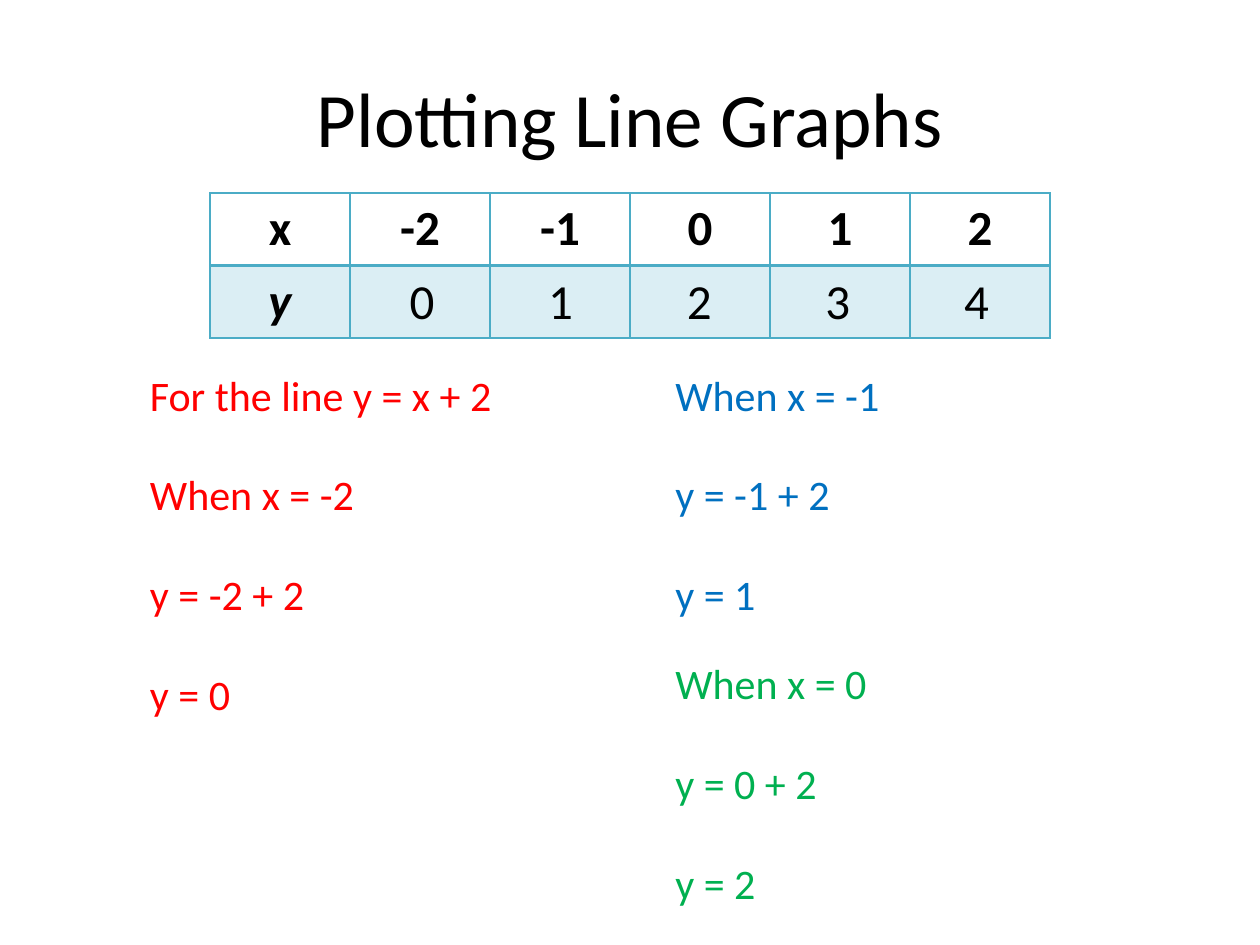
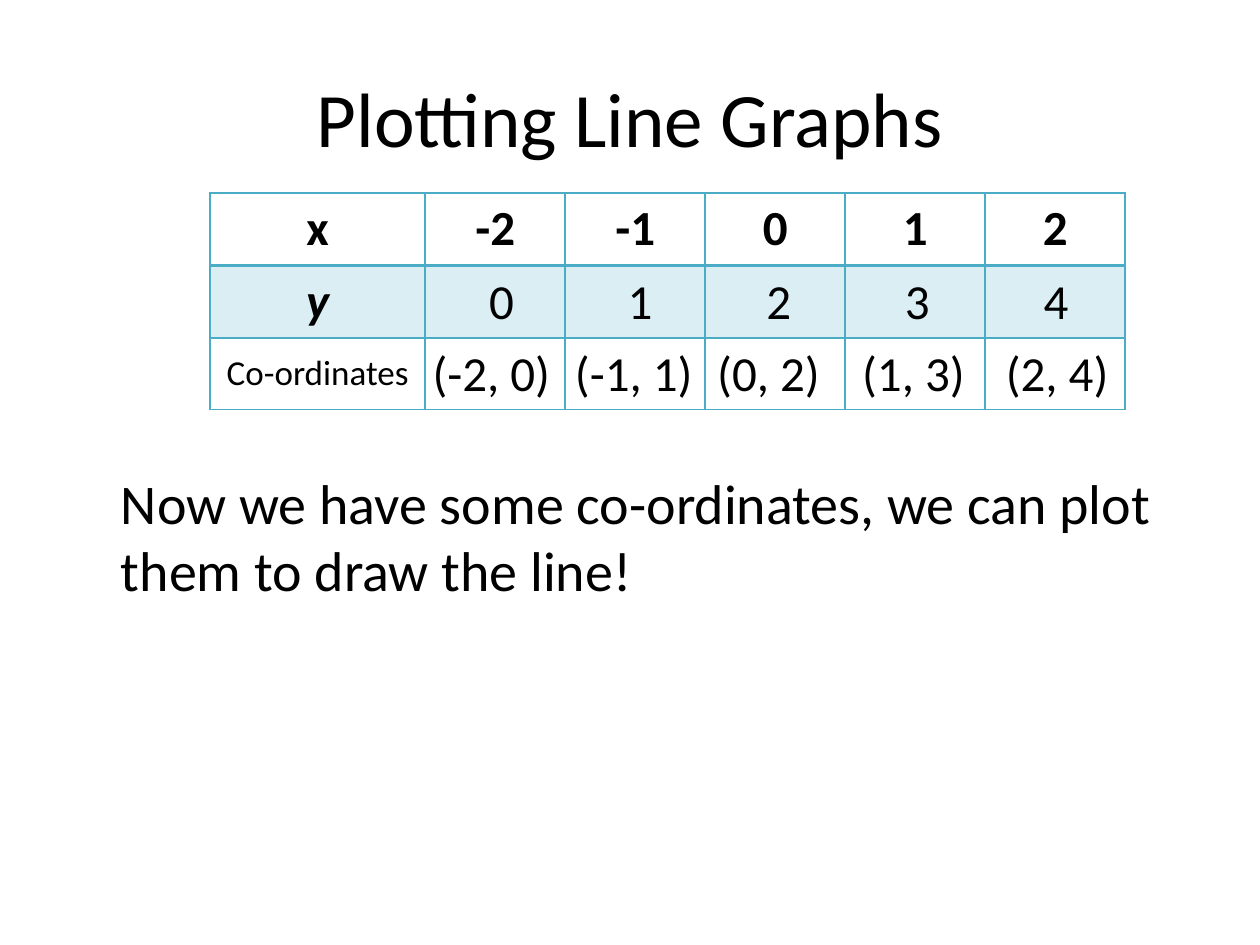
from lxml.etree import SubElement
from pptx import Presentation
from pptx.dml.color import RGBColor
from pptx.enum.text import MSO_ANCHOR as Anchor, PP_ALIGN as Align
from pptx.oxml.ns import qn
from pptx.util import Pt

BLACK = RGBColor(0x00, 0x00, 0x00)
RED = RGBColor(0xFF, 0x00, 0x00)
BLUE = RGBColor(0x00, 0x70, 0xC0)
GREEN = RGBColor(0x00, 0xB0, 0x50)
TEAL = RGBColor(0x4B, 0xAC, 0xC6)
PALE_TEAL = RGBColor(0xDB, 0xEE, 0xF4)

TITLE_ONLY = 5
INSET = 3.6
TABLE_LEFT, TABLE_TOP = 120, 110.2
COLUMN_WIDTH, ROW_HEIGHT = 80, 40.9
VALUE_PITCH, VALUE_TOP = 79.2, 151.2
X_VALUES = ["-2", "-1", "0", "1", "2"]
Y_VALUES = ["0", "1", "2", "3", "4"]


class LessonDeck:
    font = "Calibri"

    def __init__(self):
        self.deck = Presentation()
        self.deck.slide_width, self.deck.slide_height = Pt(720), Pt(540)
        self.page = None

    def add_page(self, heading):
        self.page = self.deck.slides.add_slide(self.deck.slide_layouts[TITLE_ONLY])
        title = self.page.shapes.title
        title.left, title.top, title.width, title.height = Pt(36), Pt(21.6), Pt(648), Pt(90)
        self.set_insets(title.text_frame)
        title.text_frame.vertical_anchor = Anchor.MIDDLE
        self.add_span(title.text_frame.paragraphs[0], heading, 44, align=Align.CENTER)

    def set_insets(self, target):
        target.margin_left = target.margin_right = Pt(INSET)
        target.margin_top = target.margin_bottom = Pt(INSET)

    def add_span(self, para, words, size, color=BLACK, align=Align.LEFT,
                 bold=False, italic=False):
        para.alignment = align
        span = para.add_run()
        span.text = words
        span.font.name = self.font
        span.font.size = Pt(size)
        span.font.color.rgb = color
        span.font.bold, span.font.italic = bold, italic

    def add_text(self, lines, left, top, width, height, size,
                 color=BLACK, align=Align.LEFT, gap=0):
        box = self.page.shapes.add_textbox(Pt(left), Pt(top), Pt(width), Pt(height))
        frame = box.text_frame
        frame.word_wrap = True
        self.set_insets(frame)
        for index, line in enumerate(lines):
            para = frame.add_paragraph() if index else frame.paragraphs[0]
            para.space_after = Pt(gap)
            self.add_span(para, line, size, color, align)

    def add_working(self, lines, left, top, height, color):
        self.add_text(lines, left, top, 232.6, height, 24, color, gap=28.2)

    def add_values(self, values, lefts, top, width):
        for value, left in zip(values, lefts):
            self.add_text([value], left, top, width, 42.5, 28, align=Align.CENTER)

    def add_y_values(self, first_left):
        lefts = [first_left + VALUE_PITCH * index for index in range(len(Y_VALUES))]
        self.add_values(Y_VALUES, lefts, VALUE_TOP, VALUE_PITCH)

    def add_border(self, cell, widths):
        properties = cell._tc.get_or_add_tcPr()
        for position, (side, width) in enumerate(widths.items()):
            line = SubElement(properties, qn(f"a:ln{side}"), w=str(Pt(width)))
            fill = SubElement(line, qn("a:solidFill"))
            SubElement(fill, qn("a:srgbClr"), val=str(TEAL))
            properties.insert(position, line)

    def add_value_table(self, label_width, row_count):
        widths = [label_width] + [COLUMN_WIDTH] * len(X_VALUES)
        frame = self.page.shapes.add_table(
            row_count, len(widths), Pt(TABLE_LEFT), Pt(TABLE_TOP),
            Pt(sum(widths)), Pt(ROW_HEIGHT * row_count))
        table = frame.table
        table.first_row = table.horz_banding = False
        for column, width in zip(table.columns, widths):
            column.width = Pt(width)
        for row_index, row in enumerate(table.rows):
            row.height = Pt(ROW_HEIGHT)
            for cell in row.cells:
                self.set_insets(cell)
                if row_index == 1:
                    cell.fill.solid()
                    cell.fill.fore_color.rgb = PALE_TEAL
                else:
                    cell.fill.background()
                self.add_border(cell, {"L": 1, "R": 1,
                                       "T": 2 if row_index == 1 else 1,
                                       "B": 2 if row_index == 0 else 1})
        for column_index, heading in enumerate(["x"] + X_VALUES):
            para = table.cell(0, column_index).text_frame.paragraphs[0]
            self.add_span(para, heading, 28, align=Align.CENTER, bold=True)
        self.add_span(table.cell(1, 0).text_frame.paragraphs[0], "y", 28,
                      align=Align.CENTER, bold=True, italic=True)
        return table


def build_substitution_page(lesson):
    lesson.add_page("Plotting Line Graphs")
    lesson.add_value_table(COLUMN_WIDTH, 2)
    lesson.add_working(["For the line y = x + 2", "When x = -2", "y = -2 + 2", "y = 0"],
                       82.1, 207.4, 210, RED)
    lesson.add_working(["When x = -1", "y = -1 + 2", "y = 1"], 382.3, 207.4, 152, BLUE)
    lesson.add_working(["When x = 0", "y = 0 + 2", "y = 2"], 382.3, 372.2, 152, GREEN)
    lesson.add_y_values(201.6)


def build_coordinates_page(lesson):
    lesson.add_page("Plotting Line Graphs")
    label = lesson.add_value_table(123, 3).cell(2, 0)
    label.vertical_anchor = Anchor.MIDDLE
    lesson.add_span(label.text_frame.paragraphs[0], "Co-ordinates", 20, align=Align.CENTER)
    lesson.add_y_values(247)
    pairs = [f"({x}, {y})" for x, y in zip(X_VALUES, Y_VALUES)]
    lesson.add_values(pairs, [235.4, 316.8, 393.8, 476.6, 558.7], 192.2, 90.7)
    lesson.add_text(["Now we have some co-ordinates, we can plot them to draw the line!"],
                    65.5, 264.2, 601.2, 85, 32)


def main():
    lesson = LessonDeck()
    build_substitution_page(lesson)
    build_coordinates_page(lesson)
    lesson.deck.save("out.pptx")


if __name__ == "__main__":
    main()
